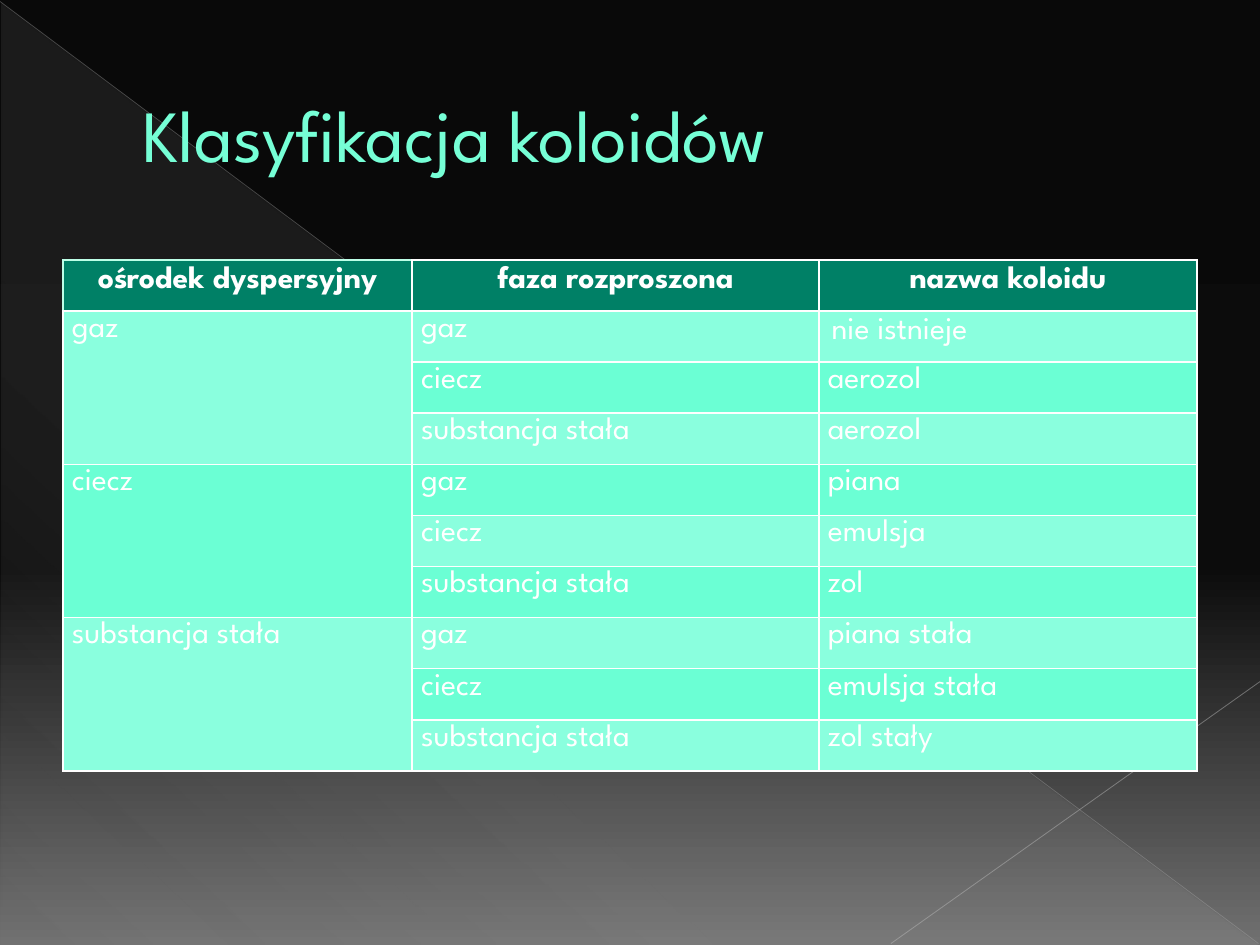
import dataclasses
import typing

import lxml.etree
import pptx
import pptx.dml.color
import pptx.enum.shapes
import pptx.enum.text
import pptx.oxml
import pptx.oxml.ns
import pptx.util

Cm = pptx.util.Cm
Pt = pptx.util.Pt
qn = pptx.oxml.ns.qn

FONT = "League Spartan"
COLORS = {
    "night": "090909",
    "coal": "0C0C0C",
    "smoke": "707070",
    "veil": "D8D8D8",
    "diagonal": "B4B4B4",
    "corner": "BDBDBD",
    "title": "76FFD6",
    "title_outline": "00B18D",
    "header": "008066",
    "band_light": "8AFFDE",
    "band_dark": "6BFFD4",
    "white": "FFFFFF",
    "header_edge": "BDFFE7",
}
HEADERS = ("ośrodek dyspersyjny", "faza rozproszona", "nazwa koloidu")
PHASES = ("gaz", "ciecz", "substancja stała")
COLLOIDS = (
    ("nie istnieje", "aerozol", "aerozol"),
    ("piana", "emulsja", "zol"),
    ("piana stała", "emulsja stała", "zol stały"),
)
COLUMN_WIDTHS = (7.04, 8.2, 7.62)
ROW_HEIGHT = 1.03


@dataclasses.dataclass
class Stop:
    """A gradient stop, with position and opacity in percent."""

    position: int
    color: str
    opacity: int = 100


@dataclasses.dataclass
class Ray:
    """A thin translucent line, with ends in centimetres."""

    start: tuple[float, float]
    end: tuple[float, float]
    color: str
    width: float
    opacity: int


@dataclasses.dataclass
class CellStyle:
    """The look of one table cell."""

    fill: str
    bold: bool = False
    centered: bool = False
    compact: bool = True


RAYS = (
    Ray((0, 0.03), (25.37, 19.02), "diagonal", 0.39, 35),
    Ray((25.4, 13.74), (17.96, 19.02), "corner", 0.47, 45),
)


def rgb(name: str) -> pptx.dml.color.RGBColor:
    """Return a named colour."""
    return pptx.dml.color.RGBColor.from_string(COLORS[name])


def add_color(parent: typing.Any, name: str, opacity: int = 100) -> None:
    """Append a colour element with its opacity."""
    color = lxml.etree.SubElement(parent, qn("a:srgbClr"), val=COLORS[name])
    if opacity < 100:
        lxml.etree.SubElement(color, qn("a:alpha"), val=str(opacity * 1000))


def apply_gradient(fill: typing.Any, parent: typing.Any, stops: list[Stop], angle: int) -> None:
    """Replace a fill with a linear gradient."""
    fill.solid()
    solid = parent.find(qn("a:solidFill"))
    gradient = pptx.oxml.parse_xml(f'<a:gradFill {pptx.oxml.ns.nsdecls("a")} rotWithShape="1"/>')
    stop_list = lxml.etree.SubElement(gradient, qn("a:gsLst"))
    for stop in stops:
        element = lxml.etree.SubElement(stop_list, qn("a:gs"), pos=str(stop.position * 1000))
        add_color(element, stop.color, stop.opacity)
    lxml.etree.SubElement(gradient, qn("a:lin"), ang=str(angle * 60000), scaled="0")
    parent.replace(solid, gradient)


def add_backdrop(slide: typing.Any) -> None:
    """Draw the background, the triangle and the rays."""
    fill = slide.background.fill
    fill.solid()
    properties = next(slide.background._cSld.iter(qn("p:bgPr")))
    apply_gradient(fill, properties, [Stop(0, "night"), Stop(60, "coal"), Stop(100, "smoke")], 90)
    triangle = slide.shapes.add_shape(
        pptx.enum.shapes.MSO_SHAPE.RIGHT_TRIANGLE, Cm(0.03), Cm(0.05), Cm(25.35), Cm(19)
    )
    triangle.shadow.inherit = False
    triangle.line.fill.background()
    stops = [Stop(0, "veil", 10), Stop(70, "veil", 8), Stop(100, "veil", 1)]
    apply_gradient(triangle.fill, triangle._element.spPr, stops, 133)
    for ray in RAYS:
        add_ray(slide, ray)


def add_ray(slide: typing.Any, ray: Ray) -> None:
    """Draw one translucent line."""
    connector = slide.shapes.add_connector(
        pptx.enum.shapes.MSO_CONNECTOR.STRAIGHT, *map(Cm, ray.start + ray.end)
    )
    connector.line.width = Pt(ray.width)
    connector.line.fill.solid()
    connector.line.color.rgb = rgb(ray.color)
    color = next(connector._element.spPr.iter(qn("a:srgbClr")))
    lxml.etree.SubElement(color, qn("a:alpha"), val=str(ray.opacity * 1000))
    lxml.etree.SubElement(connector._element.spPr, qn("a:effectLst"))


def add_run(paragraph: typing.Any, text: str, size: float, color: str, bold: bool = False) -> typing.Any:
    """Append a styled run."""
    run = paragraph.add_run()
    run.text = text
    run.font.name = FONT
    run.font.size = Pt(size)
    run.font.bold = bold
    run.font.color.rgb = rgb(color)
    return run


def add_title(slide: typing.Any, text: str) -> None:
    """Write the slide title."""
    frame = slide.shapes.add_textbox(Cm(1.27), Cm(0.74), Cm(22.86), Cm(3.89)).text_frame
    frame.word_wrap = True
    frame.vertical_anchor = pptx.enum.text.MSO_ANCHOR.MIDDLE
    paragraph = frame.paragraphs[0]
    paragraph._p.get_or_add_pPr().set("marL", str(Cm(1.35)))
    run = add_run(paragraph, text, 42, "title")
    outline = lxml.etree.Element(qn("a:ln"), w=str(Pt(0.5)))
    add_color(lxml.etree.SubElement(outline, qn("a:solidFill")), "title_outline")
    run.font._element.insert(0, outline)


def style_cell(cell: typing.Any, style: CellStyle, edges: dict[str, tuple[str, float]]) -> None:
    """Set the borders and fill of a cell."""
    properties = cell._tc.get_or_add_tcPr()
    for side in "LRTB":
        color, width = edges.get(side, ("white", 1))
        border = lxml.etree.SubElement(properties, qn(f"a:ln{side}"), w=str(Pt(width)))
        add_color(lxml.etree.SubElement(border, qn("a:solidFill")), color)
    cell.fill.solid()
    cell.fill.fore_color.rgb = rgb(style.fill)


def write_cell(cell: typing.Any, text: str, style: CellStyle) -> None:
    """Write the text of a cell."""
    paragraph = cell.text_frame.paragraphs[0]
    if style.centered:
        paragraph.alignment = pptx.enum.text.PP_ALIGN.CENTER
    if style.compact:
        cell.margin_left = cell.margin_right = Cm(0.18)
        cell.margin_top = cell.margin_bottom = Cm(0)
        paragraph.line_spacing = 1.15
        paragraph.space_after = Pt(1.2)
    add_run(paragraph, text, 18, "white", style.bold)


def add_colloid_table(slide: typing.Any) -> None:
    """Build the table of colloids by medium and dispersed phase."""
    rows = [HEADERS]
    for medium, names in zip(PHASES, COLLOIDS):
        for index, (phase, name) in enumerate(zip(PHASES, names)):
            rows.append(("" if index else medium, phase, name))
    table = slide.shapes.add_table(
        len(rows), len(HEADERS), Cm(1.27), Cm(5.24), Cm(sum(COLUMN_WIDTHS)), Cm(ROW_HEIGHT * len(rows))
    ).table
    table.horz_banding = False
    for column, width in zip(table.columns, COLUMN_WIDTHS):
        column.width = Cm(width)
    for row_index, texts in enumerate(rows):
        table.rows[row_index].height = Cm(ROW_HEIGHT)
        for column_index, text in enumerate(texts):
            cell = table.cell(row_index, column_index)
            if row_index == 0:
                style = CellStyle("header", bold=True, centered=True, compact=False)
            else:
                band_row = (row_index - 1) // 3 if column_index == 0 else row_index - 1
                fill = "band_dark" if band_row % 2 else "band_light"
                style = CellStyle(fill, compact=text != COLLOIDS[0][0])
            first = row_index == column_index == 0
            style_cell(cell, style, dict.fromkeys("LT", ("header_edge", 0.75)) if first else {})
            if text:
                write_cell(cell, text, style)
    for top in range(1, len(rows), len(PHASES)):
        table.cell(top, 0).merge(table.cell(top + len(PHASES) - 1, 0))


def main() -> None:
    """Build and save the presentation."""
    presentation = pptx.Presentation()
    presentation.slide_width, presentation.slide_height = Cm(25.4), Cm(19.05)
    slide = presentation.slides.add_slide(presentation.slide_layouts[6])
    add_backdrop(slide)
    add_title(slide, "Klasyfikacja koloidów")
    add_colloid_table(slide)
    presentation.save("out.pptx")


if __name__ == "__main__":
    main()
